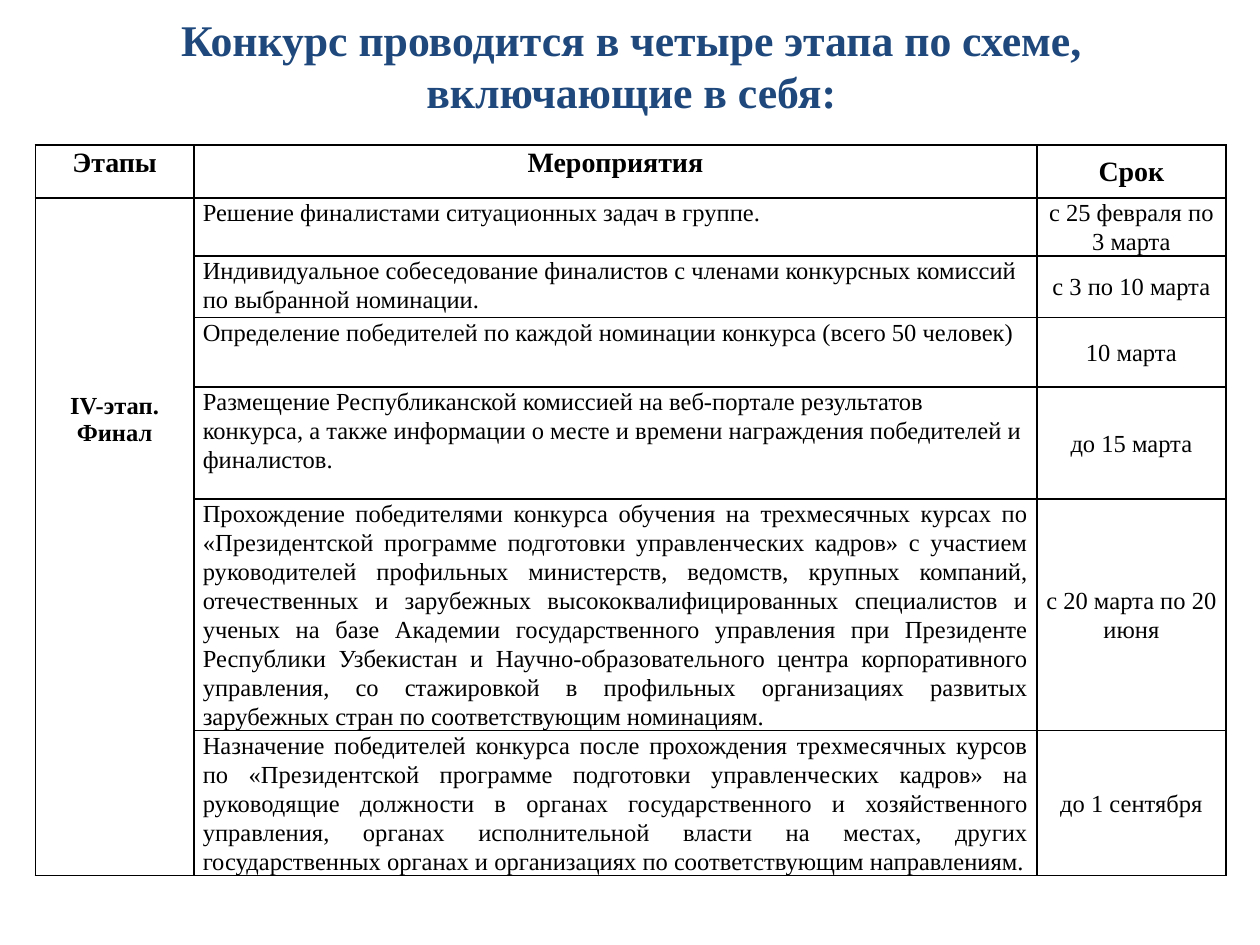
from lxml.etree import SubElement
from pptx import Presentation
from pptx.dml.color import RGBColor
from pptx.enum.text import MSO_ANCHOR as Anchor, PP_ALIGN as Align
from pptx.oxml.ns import qn
from pptx.util import Inches, Pt

BLUE = RGBColor(0x1F, 0x49, 0x7D)
BLACK = RGBColor(0, 0, 0)
FONT = "Times New Roman"

TITLE = "Конкурс проводится в четыре этапа по схеме, включающие в себя:"
HEADS = ["Этапы", "Мероприятия", "Срок"]
STAGE = "IV-этап.\nФинал"
EVENTS = [
    ("Решение финалистами ситуационных задач в группе.",
     "с 25 февраля по 3 марта", Align.LEFT),
    ("Индивидуальное собеседование финалистов с членами конкурсных комиссий "
     "по выбранной номинации.", "с 3 по 10 марта", Align.LEFT),
    ("Определение победителей по каждой номинации конкурса (всего 50 человек)",
     "10 марта", Align.LEFT),
    ("Размещение Республиканской комиссией на веб-портале результатов "
     "конкурса, а также информации о месте и времени награждения победителей "
     "и финалистов.", "до 15 марта", Align.LEFT),
    ("Прохождение победителями конкурса обучения на трехмесячных курсах по "
     "«Президентской программе подготовки управленческих кадров» с участием "
     "руководителей профильных министерств, ведомств, крупных компаний, "
     "отечественных и зарубежных высококвалифицированных специалистов и "
     "ученых на базе Академии государственного управления при Президенте "
     "Республики Узбекистан и Научно-образовательного центра корпоративного "
     "управления, со стажировкой в профильных организациях развитых "
     "зарубежных стран по соответствующим номинациям.",
     "с 20 марта по 20 июня", Align.JUSTIFY),
    ("Назначение победителей конкурса после прохождения трехмесячных курсов "
     "по «Президентской программе подготовки управленческих кадров» на "
     "руководящие должности в органах государственного и хозяйственного "
     "управления, органах исполнительной власти на местах, других "
     "государственных органах и организациях по соответствующим направлениям.",
     "до 1 сентября", Align.JUSTIFY),
]
COLS = [1.26, 6.69, 1.5]
ROWS = [0.42, 0.46, 0.49, 0.55, 0.89, 1.84, 1.15]


def style_text(frame, size, color, bold, align, spacing=None):
    for par in frame.paragraphs:
        par.alignment = align
        par.line_spacing = spacing
        for run in par.runs:
            font = run.font
            font.name, font.size, font.bold = FONT, Pt(size), bold
            font.color.rgb = color


def add_title(slide):
    title = slide.shapes.title
    title.left, title.top = Inches(0.51), Inches(-0.11)
    title.width, title.height = Inches(9), Inches(1.25)
    frame = title.text_frame
    frame.text = TITLE
    frame.vertical_anchor = Anchor.MIDDLE
    style_text(frame, 25, BLUE, True, Align.CENTER)


def set_border(cell):
    """Give the cell a thin black line on each side."""
    props = cell._tc.get_or_add_tcPr()
    for place, side in enumerate(("a:lnL", "a:lnR", "a:lnT", "a:lnB")):
        line = props.makeelement(qn(side), {"w": str(Pt(1))})
        fill = SubElement(line, qn("a:solidFill"))
        SubElement(fill, qn("a:srgbClr"), val=str(BLACK))
        props.insert(place, line)


def fill_cell(cell, text, size=14, bold=False, align=Align.CENTER,
              anchor=Anchor.MIDDLE, spacing=1.07):
    cell.text_frame.text = text
    cell.vertical_anchor = anchor
    cell.margin_left = cell.margin_right = Inches(0.07)
    cell.margin_top = cell.margin_bottom = 0
    style_text(cell.text_frame, size, BLACK, bold, align, spacing)


def add_plan(slide):
    table = slide.shapes.add_table(
        len(ROWS), len(COLS), Inches(0.28), Inches(1.15),
        Inches(sum(COLS)), Inches(sum(ROWS))).table
    for col, width in zip(table.columns, COLS):
        col.width = Inches(width)
    for row, height in zip(table.rows, ROWS):
        row.height = Inches(height)
    for cell in table.iter_cells():
        cell.fill.background()
        set_border(cell)

    for col, head in enumerate(HEADS):
        anchor = Anchor.MIDDLE if head == "Срок" else Anchor.TOP
        fill_cell(table.cell(0, col), head, 16, True, anchor=anchor)
    for row, (event, term, align) in enumerate(EVENTS, 1):
        fill_cell(table.cell(row, 1), event, align=align, anchor=Anchor.TOP)
        fill_cell(table.cell(row, 2), term)

    stage = table.cell(1, 0)
    stage.merge(table.cell(len(EVENTS), 0))
    fill_cell(stage, STAGE, bold=True, anchor=Anchor.TOP, spacing=1)
    stage.margin_top = Inches(1.55)


def main():
    deck = Presentation()
    deck.slide_width, deck.slide_height = Inches(10), Inches(7.5)
    slide = deck.slides.add_slide(deck.slide_layouts[5])
    add_title(slide)
    add_plan(slide)
    deck.save("out.pptx")


if __name__ == "__main__":
    main()
